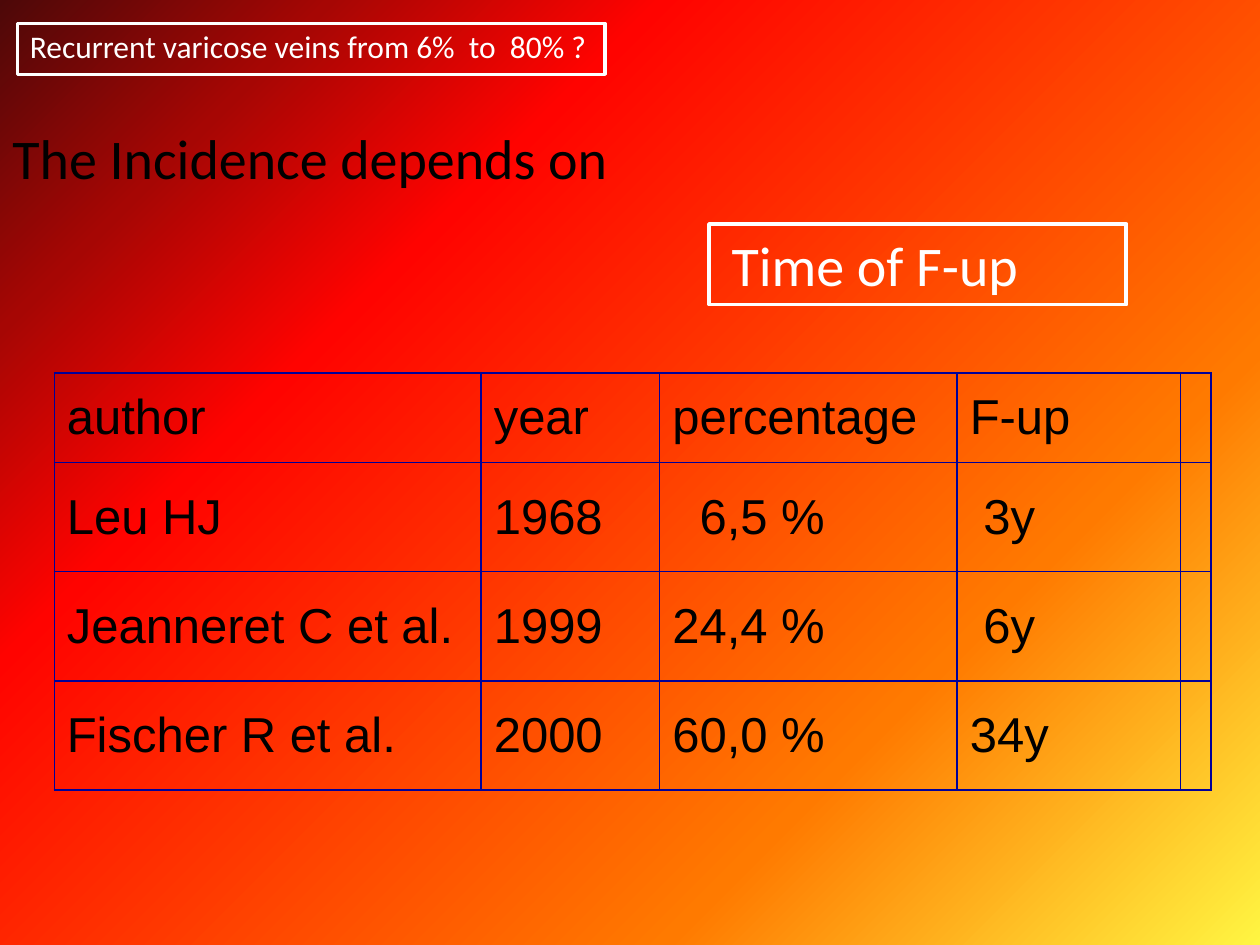
import pptx
import pptx.dml.color
import pptx.enum.shapes
import pptx.enum.text
import pptx.oxml
import pptx.oxml.ns
import pptx.util
from dataclasses import dataclass

Pt = pptx.util.Pt


@dataclass(frozen=True)
class Theme:
    heading_font: str = "Calibri"
    table_font: str = "Arial"
    light: str = "FFFFFF"
    dark: str = "000000"
    grid: str = "000099"
    topic_size: int = 18
    heading_size: int = 32
    table_size: int = 28
    # Position in percent and colour, from bottom right to top left
    backdrop: tuple = ((0, "FFF542"), (27, "FF7A00"), (70, "FF0300"),
                       (85, "A60604"), (100, "4D0808"))


def rgb(value):
    return pptx.dml.color.RGBColor.from_string(value)


def drawing_xml(tag, content, attributes=""):
    namespace = pptx.oxml.ns.nsdecls("a")
    return pptx.oxml.parse_xml(f"<a:{tag} {namespace} {attributes}>{content}</a:{tag}>")


class SlideBuilder:
    def __init__(self, slide, theme):
        self.slide = slide
        self.theme = theme

    def background(self):
        fill = self.slide.background.fill
        fill.gradient()
        fill.gradient_angle = 135
        stops = self.slide.element.xpath(".//p:bgPr/a:gradFill/a:gsLst")[0]
        for stop in list(stops):
            stops.remove(stop)
        for percent, colour in self.theme.backdrop:
            stops.append(drawing_xml("gs", f'<a:srgbClr val="{colour}"/>',
                                     f'pos="{percent * 1000}"'))

    def style(self, paragraph, font, size, colour):
        for run in paragraph.runs:
            run.font.name = font
            run.font.size = Pt(size)
            run.font.color.rgb = rgb(colour)

    def frame(self, left, top, width, height, weight):
        box = self.slide.shapes.add_shape(
            pptx.enum.shapes.MSO_SHAPE.RECTANGLE,
            Pt(left), Pt(top), Pt(width), Pt(height))
        box.shadow.inherit = False
        box.fill.background()
        box.line.color.rgb = rgb(self.theme.light)
        box.line.width = Pt(weight)

    def text(self, wording, left, top, width, height, size, colour):
        box = self.slide.shapes.add_textbox(Pt(left), Pt(top), Pt(width), Pt(height))
        box.text_frame.word_wrap = True
        box.text_frame.text = wording
        self.style(box.text_frame.paragraphs[0], self.theme.heading_font, size, colour)

    def borders(self, cell, weight):
        properties = cell._tc.get_or_add_tcPr()
        line_fill = f'<a:solidFill><a:srgbClr val="{self.theme.grid}"/></a:solidFill>'
        for index, side in enumerate(("lnL", "lnR", "lnT", "lnB")):
            properties.insert(index, drawing_xml(side, line_fill, f'w="{Pt(weight)}"'))

    def table(self, rows, left, top, widths, heights, indents):
        grid = self.slide.shapes.add_table(
            len(heights), len(widths), Pt(left), Pt(top),
            Pt(sum(widths)), Pt(sum(heights))).table
        grid.first_row = grid.horz_banding = False
        for column, width in zip(grid.columns, widths):
            column.width = Pt(width)
        for row, height in zip(grid.rows, heights):
            row.height = Pt(height)
        for r, row in enumerate(rows):
            for c, wording in enumerate(row):
                cell = grid.cell(r, c)
                cell.fill.background()
                cell.vertical_anchor = pptx.enum.text.MSO_ANCHOR.MIDDLE
                cell.margin_left = Pt(7.2 + indents.get((r, c), 0))
                cell.text_frame.text = wording
                self.style(cell.text_frame.paragraphs[0], self.theme.table_font,
                           self.theme.table_size, self.theme.dark)
                self.borders(cell, 1)


def main():
    deck = pptx.Presentation()
    deck.slide_width, deck.slide_height = Pt(720), Pt(540)
    theme = Theme()
    builder = SlideBuilder(deck.slides.add_slide(deck.slide_layouts[6]), theme)
    builder.background()

    # Framed topic
    builder.frame(10, 13.5, 335.75, 29, 2)
    builder.text("Recurrent varicose veins from 6%  to  80% ?",
                 10, 11.75, 338, 29, theme.topic_size, theme.light)

    # Studies; short values are indented to line up their digits
    studies = [
        ("author", "year", "percentage", "F-up", ""),
        ("Leu HJ", "1968", "6,5 %", "3y", ""),
        ("Jeanneret C et al.", "1999", "24,4 %", "6y", ""),
        ("Fischer R et al.", "2000", "60,0 %", "34y", ""),
    ]
    space = 7.8
    builder.table(studies, 31, 213.25,
                  widths=(244, 102, 170, 127.75, 16.5),
                  heights=(51, 62.4, 62.4, 62.4),
                  indents={(1, 2): 2 * space, (1, 3): space, (2, 3): space})

    # Heading and framed factor
    builder.text("The Incidence depends on", 0, 67, 481, 46,
                 theme.heading_size, theme.dark)
    builder.text("Time of F-up", 411, 128, 226, 46,
                 theme.heading_size, theme.light)
    builder.frame(405.25, 128, 238.5, 46, 2.25)

    deck.save("out.pptx")


if __name__ == "__main__":
    main()
